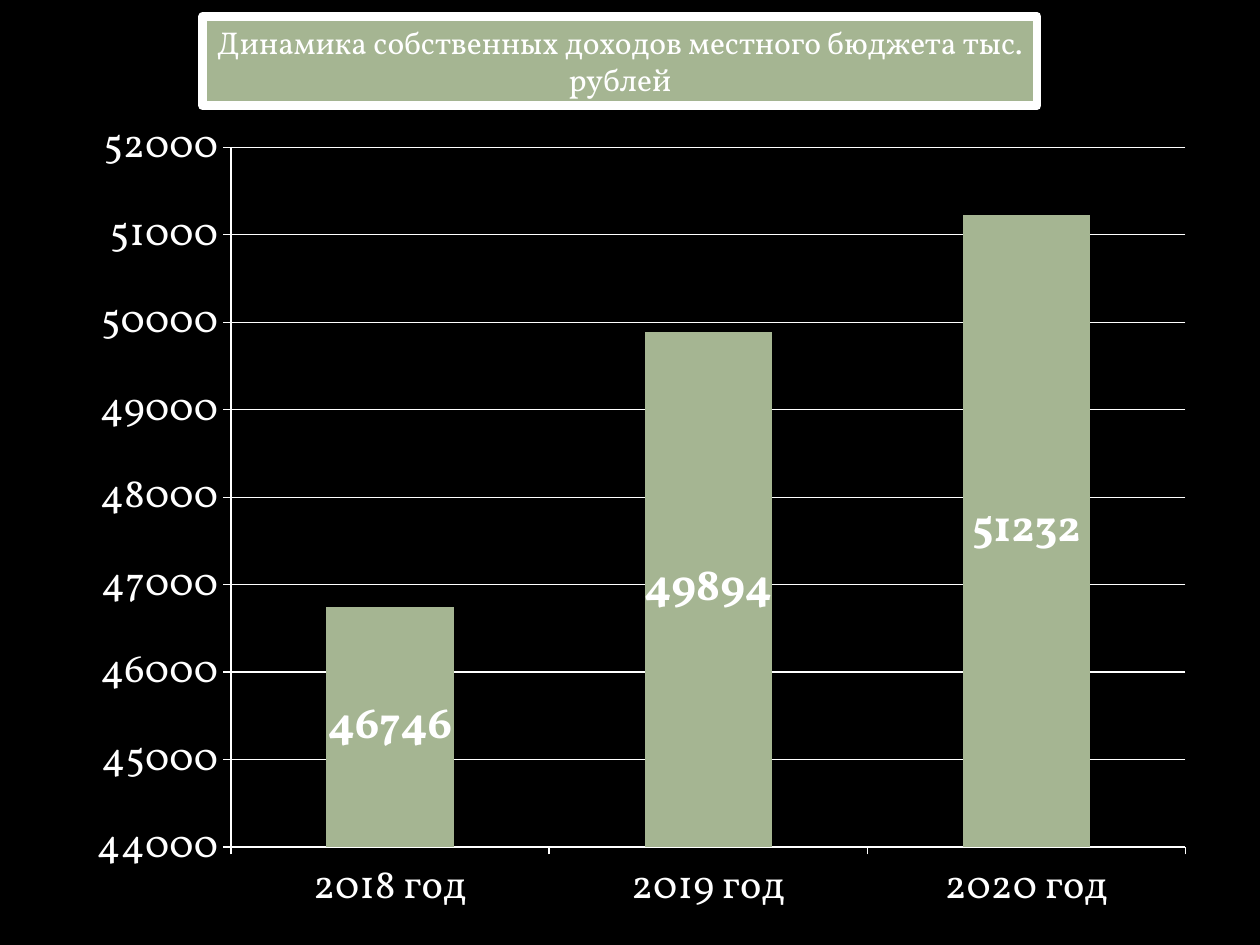
from lxml.etree import SubElement
from pptx import Presentation
from pptx.chart.data import CategoryChartData
from pptx.dml.color import RGBColor
from pptx.enum.chart import XL_CHART_TYPE, XL_LABEL_POSITION, XL_TICK_MARK
from pptx.enum.shapes import MSO_SHAPE
from pptx.enum.text import MSO_ANCHOR, PP_ALIGN
from pptx.oxml import parse_xml
from pptx.oxml.ns import nsdecls, qn
from pptx.util import Inches, Pt

FONT = "Vollkorn"
BLACK, WHITE, GREEN = "000000", "FFFFFF", "A5B592"
INCOME = {"2018 год": 46746, "2019 год": 49894, "2020 год": 51232}


def paint(fmt, color):
    """Give a fill a solid colour."""
    fmt.solid()
    fmt.fore_color.rgb = RGBColor.from_string(color)


def style_font(font, size, bold=False):
    font.name, font.size, font.bold = FONT, Pt(size), bold
    font.color.rgb = RGBColor.from_string(WHITE)


def style_line(line, width):
    paint(line.fill, WHITE)
    line.width = Pt(width)


def add_glow_shadow(shape, blur, alpha):
    """Add a black shadow spread evenly around the shape."""
    shape._element.spPr.append(parse_xml(
        f'<a:effectLst {nsdecls("a")}><a:outerShdw blurRad="{Pt(blur)}" dist="0" dir="0">'
        f'<a:srgbClr val="{BLACK}"><a:alpha val="{alpha * 1000}"/></a:srgbClr>'
        '</a:outerShdw></a:effectLst>'))


def add_title(slide, box, text):
    s = slide.shapes.add_shape(MSO_SHAPE.RECTANGLE, *map(Inches, box))
    paint(s.fill, GREEN)
    style_line(s.line, 5)
    add_glow_shadow(s, 7.5, 50)
    tf = s.text_frame
    tf.word_wrap = True
    tf.vertical_anchor = MSO_ANCHOR.TOP
    p = tf.paragraphs[0]
    p.text = text
    p.alignment = PP_ALIGN.CENTER
    style_font(p.font, 18)


def set_plot_box(chart, **shares):
    """Fix the inner plot area as shares of the chart's box."""
    area = chart._chartSpace.chart.plotArea
    for old in area.findall(qn("c:layout")):
        area.remove(old)
    layout = parse_xml(f'<c:layout {nsdecls("c")}/>')
    area.insert(0, layout)
    manual = SubElement(layout, qn("c:manualLayout"))
    settings = {"layoutTarget": "inner", "xMode": "edge", "yMode": "edge", **shares}
    for name, value in settings.items():
        SubElement(manual, qn(f"c:{name}")).set("val", str(value))


def add_income_chart(slide, box, income):
    data = CategoryChartData()
    data.categories = list(income)
    data.add_series("Series 1", list(income.values()))
    chart = slide.shapes.add_chart(
        XL_CHART_TYPE.COLUMN_STACKED, *map(Inches, box), data).chart
    chart.has_legend = chart.has_title = False
    style_font(chart.font, 23)
    set_plot_box(chart, x=0.14, y=0.05, w=0.84, h=0.84)

    for axis in (chart.category_axis, chart.value_axis):
        axis.major_tick_mark = XL_TICK_MARK.OUTSIDE
        axis.minor_tick_mark = XL_TICK_MARK.NONE
        style_line(axis.format.line, 0.75)
    axis = chart.value_axis
    axis.minimum_scale, axis.maximum_scale, axis.major_unit = 44000, 52000, 1000
    axis.has_major_gridlines = True
    style_line(axis.major_gridlines.format.line, 0.75)

    plot = chart.plots[0]
    plot.gap_width, plot.overlap = 150, 100
    plot.vary_by_categories = False
    series = plot.series[0]
    paint(series.format.fill, GREEN)
    labels = series.data_labels
    labels.show_value = True
    labels.position = XL_LABEL_POSITION.CENTER
    style_font(labels.font, 25.6, bold=True)


def main():
    prs = Presentation()
    prs.slide_width, prs.slide_height = Inches(10), Inches(7.5)
    slide = prs.slides.add_slide(prs.slide_layouts[6])
    paint(slide.background.fill, BLACK)
    add_income_chart(slide, (0.57, 0.84, 9.02, 6.61), INCOME)
    add_title(slide, (1.61, 0.13, 6.62, 0.71),
              "Динамика собственных доходов местного бюджета тыс. рублей")
    prs.save("out.pptx")


if __name__ == "__main__":
    main()
